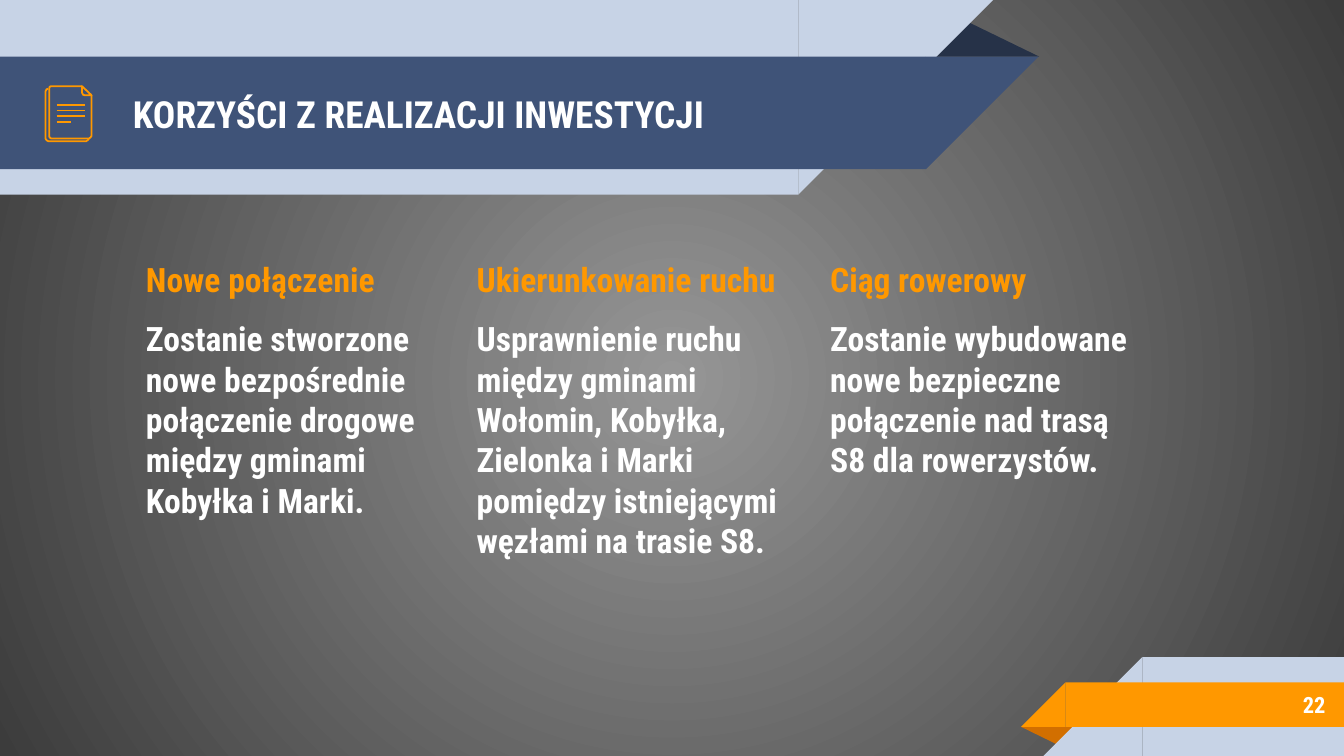
from lxml import etree
from pptx import Presentation
from pptx.dml.color import RGBColor
from pptx.enum.shapes import MSO_CONNECTOR as Connector, MSO_SHAPE as Shape
from pptx.enum.text import MSO_ANCHOR as Anchor, MSO_AUTO_SIZE as AutoSize, PP_ALIGN as Align
from pptx.oxml.ns import qn
from pptx.util import Cm, Pt

COLORS = {
    "glow": "969696", "edge": "3C3C3C", "pale": "C7D3E6", "navy": "3F5378",
    "navy_fold": "263248", "orange": "FF9800", "orange_fold": "D26F00", "white": "FFFFFF",
}
FONT = "Roboto Condensed"
INSET = Cm(0.25)

COLUMNS = [
    (2.51, 6.25, "Nowe połączenie",
     "Zostanie stworzone nowe bezpośrednie połączenie drogowe między gminami Kobyłka i Marki."),
    (8.76, 6.4, "Ukierunkowanie ruchu",
     "Usprawnienie ruchu między gminami Wołomin, Kobyłka, Zielonka i Marki pomiędzy "
     "istniejącymi węzłami na trasie S8."),
    (15.44, 6.25, "Ciąg rowerowy",
     "Zostanie wybudowane nowe bezpieczne połączenie nad trasą S8 dla rowerzystów."),
]

BACK_SHEET = [(1.68, 2.62), (1.66, 2.65), (1.63, 2.67), (0.91, 2.67), (0.88, 2.65),
              (0.86, 2.62), (0.86, 1.73), (0.88, 1.69), (0.91, 1.68)]
FRONT_SHEET = [(1.73, 1.8), (1.73, 2.57), (1.71, 2.6), (1.68, 2.62), (0.97, 2.62), (0.94, 2.6),
               (0.93, 2.57), (0.93, 1.68), (0.94, 1.64), (0.97, 1.63), (1.55, 1.63)]
PAGE_CORNER = [(1.55, 1.63), (1.73, 1.8), (1.6, 1.8), (1.57, 1.79), (1.55, 1.75)]


def rgb(name):
    return RGBColor.from_string(COLORS[name])


class SlideBuilder:
    """Holds the style and the slide being drawn."""

    def __init__(self, slide):
        self.slide = slide
        self.shapes = slide.shapes

    def radial_background(self, center, rim):
        fill = self.slide.background.fill
        fill.gradient()
        for stop, color, position in zip(fill.gradient_stops, (center, rim), (0, 1)):
            stop.color.rgb = rgb(color)
            stop.position = position
        linear = next(self.slide.element.iter(qn("a:lin")))
        radial = etree.Element(qn("a:path"), path="circle")
        etree.SubElement(radial, qn("a:fillToRect"), l="50000", t="50000", r="50000", b="50000")
        linear.getparent().replace(linear, radial)

    def block(self, kind, x, y, w, h, color):
        block = self.shapes.add_shape(kind, Cm(x), Cm(y), Cm(w), Cm(h))
        block.shadow.inherit = False
        block.fill.solid()
        block.fill.fore_color.rgb = rgb(color)
        block.line.fill.background()
        return block

    def band(self, x, y, w, h, color, tip="right"):
        """Bar with a 45 degree slanted end on the side named by tip."""
        self.block(Shape.RECTANGLE, x, y, w, h, color)
        tip_x, flip = (x + w, "flipV") if tip == "right" else (x - h, "flipH")
        slant = self.block(Shape.RIGHT_TRIANGLE, tip_x, y, h, h, color)
        slant.element.spPr.xfrm.set(flip, "1")

    def fold(self, x, y, w, h, color, rotation=0):
        fold = self.block(Shape.ISOSCELES_TRIANGLE, x, y, w, h, color)
        fold.adjustments[0] = 0.324
        fold.rotation = rotation

    def frame(self, text_frame, anchor):
        settings = {
            "word_wrap": True, "auto_size": AutoSize.NONE, "vertical_anchor": anchor,
            "margin_left": INSET, "margin_right": INSET,
            "margin_top": INSET, "margin_bottom": INSET,
        }
        for key, value in settings.items():
            setattr(text_frame, key, value)

    def add_words(self, paragraph, text, size, color, **paragraph_format):
        run = paragraph.add_run()
        run.text = text
        for key, value in {"name": FONT, "size": Pt(size), "bold": True}.items():
            setattr(run.font, key, value)
        run.font.color.rgb = rgb(color)
        for key, value in paragraph_format.items():
            setattr(paragraph, key, value)

    def text_box(self, x, y, w, h, anchor=Anchor.TOP):
        frame = self.shapes.add_textbox(Cm(x), Cm(y), Cm(w), Cm(h)).text_frame
        self.frame(frame, anchor)
        return frame

    def title(self, text, x, y, w, h):
        """Fill the title placeholder and bring it in front of the bands."""
        title = self.shapes.title
        place = {"left": x, "top": y, "width": w, "height": h}
        for key, value in place.items():
            setattr(title, key, Cm(value))
        self.frame(title.text_frame, Anchor.MIDDLE)
        self.add_words(title.text_frame.paragraphs[0], text, 20, "white", alignment=Align.LEFT)
        title.element.getparent().append(title.element)

    def column(self, x, w, heading, body):
        frame = self.text_box(x, 4.65, w, 7.52)
        self.add_words(frame.paragraphs[0], heading, 18, "orange")
        self.add_words(frame.add_paragraph(), body, 18, "white", space_before=Pt(10))

    def page_number(self, text, x, y, w, h):
        frame = self.text_box(x, y, w, h, Anchor.MIDDLE)
        self.add_words(frame.paragraphs[0], text, 12, "white", alignment=Align.RIGHT)

    def stroke(self, outline):
        outline.line.color.rgb = rgb("orange")
        outline.line.width = Pt(0.96)

    def contour(self, points, close=False):
        start, *rest = [(Cm(x), Cm(y)) for x, y in points]
        builder = self.shapes.build_freeform(*start)
        builder.add_line_segments(rest, close=close)
        contour = builder.convert_to_shape()
        contour.shadow.inherit = False
        contour.fill.background()
        self.stroke(contour)

    def rule(self, x1, x2, y):
        rule = self.shapes.add_connector(Connector.STRAIGHT, Cm(x1), Cm(y), Cm(x2), Cm(y))
        self.stroke(rule)
        etree.SubElement(rule.element.spPr, qn("a:effectLst"))

    def document_icon(self):
        self.contour(BACK_SHEET)
        self.contour(FRONT_SHEET)
        for row, end in enumerate((1.6, 1.6, 1.6, 1.35)):
            self.rule(1.07, end, 1.98 + 0.11 * row)
        self.contour(PAGE_CORNER, close=True)


def main():
    deck = Presentation()
    deck.slide_width, deck.slide_height = Cm(25.4), Cm(14.29)
    page = SlideBuilder(deck.slides.add_slide(deck.slide_layouts[5]))
    page.radial_background("glow", "edge")

    page.fold(17.48, 0.36, 2.16, 0.71, "navy_fold")
    page.band(0, 0, 15.09, 3.68, "pale")
    page.band(0, 1.07, 17.5, 2.13, "navy")

    page.fold(19.3, 13.74, 1.09, 0.36, "orange_fold", rotation=180)
    page.band(21.59, 12.42, 3.81, 1.87, "pale", tip="left")
    page.band(20.14, 12.9, 5.26, 0.84, "orange", tip="left")

    page.title("KORZYŚCI Z REALIZACJI INWESTYCJI", 2.26, 1.09, 14.6, 2.13)
    for column in COLUMNS:
        page.column(*column)
    page.page_number("22", 21.16, 12.88, 4.14, 0.89)
    page.document_icon()

    deck.save("out.pptx")


if __name__ == "__main__":
    main()
